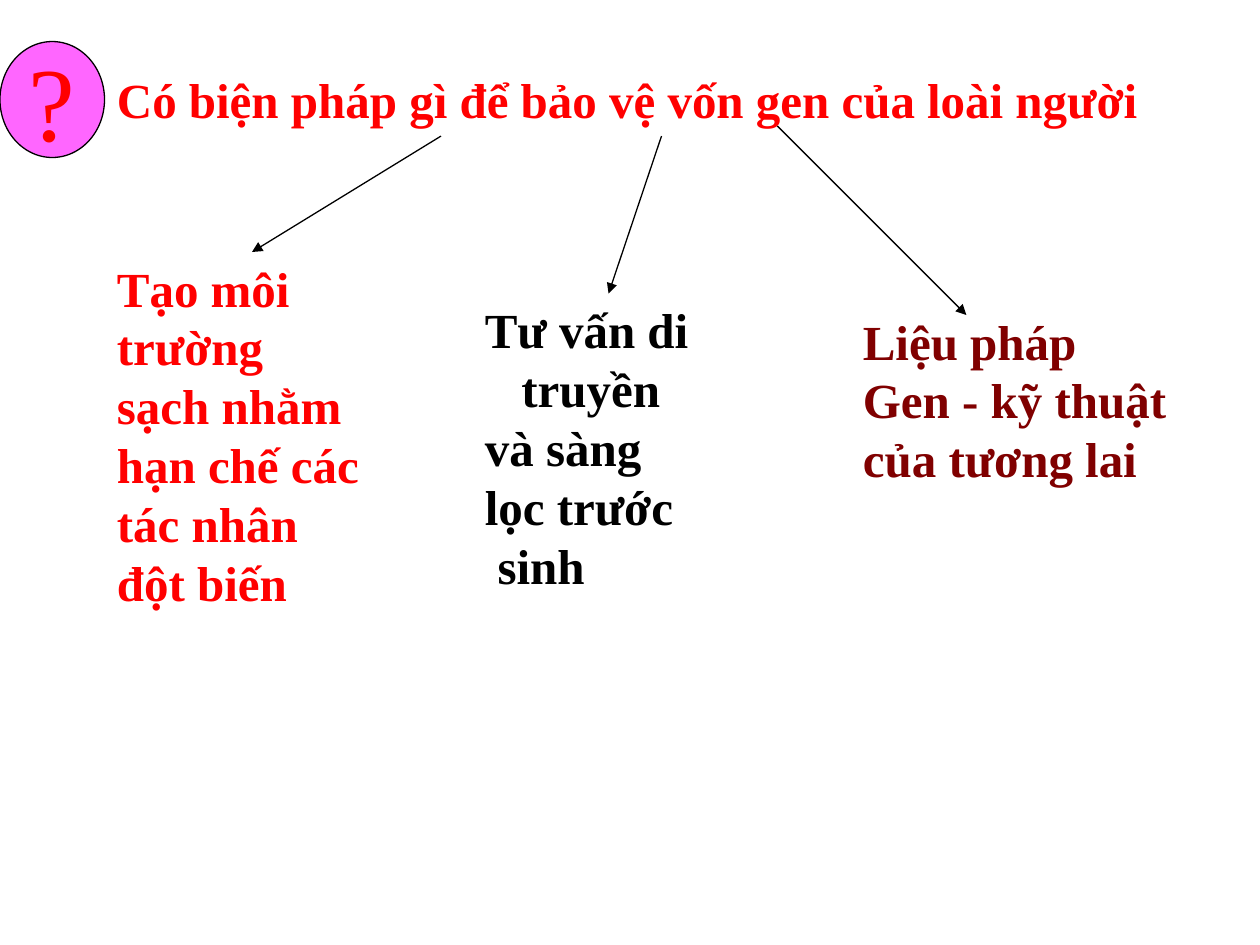
from lxml import etree
from pptx import Presentation
from pptx.dml.color import RGBColor
from pptx.enum.shapes import MSO_CONNECTOR, MSO_SHAPE
from pptx.enum.text import MSO_ANCHOR, MSO_AUTO_SIZE, PP_ALIGN
from pptx.oxml.ns import qn
from pptx.util import Inches, Pt

LINE = MSO_CONNECTOR.STRAIGHT
OVAL = MSO_SHAPE.OVAL
MIDDLE = MSO_ANCHOR.MIDDLE
GROW = MSO_AUTO_SIZE.SHAPE_TO_FIT_TEXT
CENTER = PP_ALIGN.CENTER

RED = RGBColor(0xFF, 0x00, 0x00)
BLACK = RGBColor(0x00, 0x00, 0x00)
MAROON = RGBColor(0x80, 0x00, 0x00)
PINK = RGBColor(0xFF, 0x66, 0xFF)


def style(font, size, color, bold):
    look = {"name": "Times New Roman", "size": Pt(size), "bold": bold}
    for key, value in look.items():
        setattr(font, key, value)
    font.color.rgb = color


prs = Presentation()
prs.slide_width, prs.slide_height = Inches(10), Inches(7.5)
slide = prs.slides.add_slide(prs.slide_layouts[6])
shapes = slide.shapes

# Question and its three answers: box, wrap, colour, lines (text, margin, indent)
texts = [
    ((0.83, 0.5, 9.17, 0.57), True, RED,
     [("Có biện pháp gì để bảo vệ vốn gen của loài người", 0, 0)]),
    ((0.83, 2, 2.67, 2.9), True, RED,
     [("Tạo môi trường", 0, 0), ("sạch nhằm", 0, 0), ("hạn chế các", 0, 0),
      ("tác nhân", 0, 0), ("đột biến", 0, 0)]),
    ((3.75, 2.33, 2.25, 2.44), True, BLACK,
     [("Tư vấn di truyền", 0.29, -0.29), ("và sàng", 0, 0),
      ("lọc trước", 0, 0), ("sinh", 0.1, 0)]),
    ((6.75, 2.42, 2.71, 1.5), False, MAROON,
     [("Liệu pháp", 0, 0), ("Gen - kỹ thuật", 0, 0),
      ("của tương lai", 0, 0)]),
]
for place, wrap, color, lines in texts:
    frame = shapes.add_textbox(*map(Inches, place)).text_frame
    frame.word_wrap = wrap
    frame.auto_size = GROW
    for i, (text, margin, indent) in enumerate(lines):
        para = frame.add_paragraph() if i else frame.paragraphs[0]
        if margin:
            props = para._p.get_or_add_pPr()
            props.set("marL", str(Inches(margin)))
            props.set("indent", str(Inches(indent)))
        run = para.add_run()
        run.text = text
        style(run.font, 28, color, True)

# Question mark badge
badge = shapes.add_shape(OVAL, *map(Inches, (0, 0.33, 0.83, 0.92)))
badge.shadow.inherit = False
badge.fill.solid()
badge.fill.fore_color.rgb = PINK
badge.line.color.rgb = BLACK
badge.line.width = Pt(0.75)
frame = badge.text_frame
frame.word_wrap = False
frame.vertical_anchor = MIDDLE
para = frame.paragraphs[0]
para.alignment = CENTER
run = para.add_run()
run.text = "?"
style(run.font, 60, RED, False)

# Arrows from the question to each answer
arrows = [
    (3.5, 1.08, 2, 2),
    (5.25, 1.08, 4.83, 2.33),
    (6.17, 1, 7.67, 2.5),
]
for ends in arrows:
    arrow = shapes.add_connector(LINE, *map(Inches, ends))
    arrow.line.color.rgb = BLACK
    arrow.line.width = Pt(0.75)
    tip = etree.SubElement(arrow.line._get_or_add_ln(), qn("a:tailEnd"))
    tip.set("type", "triangle")
    etree.SubElement(arrow._element.spPr, qn("a:effectLst"))

prs.save("out.pptx")
